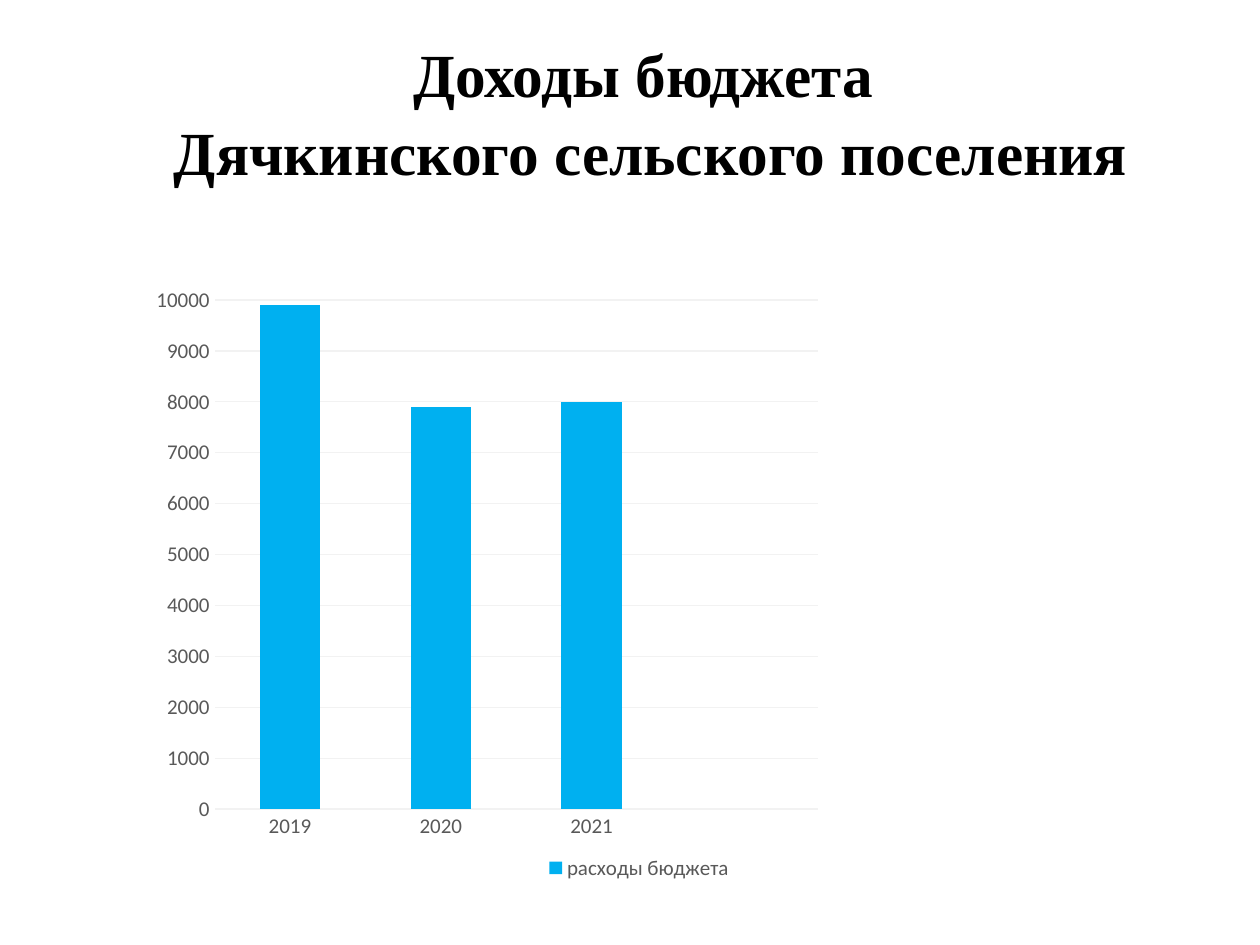
from lxml.etree import SubElement
from pptx import Presentation
from pptx.chart.data import CategoryChartData
from pptx.dml.color import RGBColor
from pptx.enum.chart import XL_CHART_TYPE, XL_LEGEND_POSITION, XL_TICK_MARK
from pptx.enum.text import MSO_ANCHOR, MSO_AUTO_SIZE, PP_ALIGN
from pptx.oxml.ns import qn
from pptx.util import Pt

COLORS = {"title": "000000", "label": "595959", "grid": "F2F2F2", "bar": "00B0F0"}


def style(font, name, size, color):
    font.name = name
    font.size = Pt(size)
    font.color.rgb = RGBColor.from_string(COLORS[color])


deck = Presentation()
deck.slide_width, deck.slide_height = Pt(720), Pt(540)
slide = deck.slides.add_slide(deck.slide_layouts[5])

# Title
title = slide.shapes.title
title.left, title.top, title.width, title.height = Pt(48), Pt(18), Pt(648), Pt(90)
frame = title.text_frame
frame.text = "Доходы бюджета \nДячкинского сельского поселения"
frame.word_wrap = True
frame.auto_size = MSO_AUTO_SIZE.NONE
frame.vertical_anchor = MSO_ANCHOR.MIDDLE
for line in frame.paragraphs:
    line.alignment = PP_ALIGN.CENTER
    line.line_spacing = 1.06
    for run in line.runs:
        style(run.font, "Times New Roman", 35, "title")
        run.font.bold = True

# Budget chart, with an empty fourth category
data = CategoryChartData()
data.categories = ["2019", "2020", "2021", ""]
data.add_series("расходы бюджета", [9900, 7900, 8000, None])
chart = slide.shapes.add_chart(
    XL_CHART_TYPE.COLUMN_CLUSTERED, Pt(46), Pt(157.5), Pt(638.5), Pt(348.5), data
).chart
chart.has_title = False
style(chart.font, "Calibri", 10, "title")

# Columns
plot = chart.plots[0]
plot.gap_width = 150
plot.vary_by_categories = False
fill = plot.series[0].format.fill
fill.solid()
fill.fore_color.rgb = RGBColor.from_string(COLORS["bar"])

# Axes and grid
for axis in (chart.category_axis, chart.value_axis):
    axis.major_tick_mark = axis.minor_tick_mark = XL_TICK_MARK.NONE
    axis.format.line.fill.background()
    style(axis.tick_labels.font, "Calibri", 12, "label")
axis = chart.value_axis
axis.minimum_scale, axis.maximum_scale, axis.major_unit = 0, 10000, 1000
axis.has_major_gridlines = True
grid = axis.major_gridlines.format.line
grid.width = Pt(0.75)
grid.color.rgb = RGBColor.from_string(COLORS["grid"])

# Legend
chart.has_legend = True
chart.legend.position = XL_LEGEND_POSITION.BOTTOM
chart.legend.include_in_layout = False
style(chart.legend.font, "Calibri", 12, "label")

# Plot area fills the left part of the chart
area = chart.plots[0]._element.getparent()
for old in area.findall(qn("c:layout")):
    area.remove(old)
layout = SubElement(area, qn("c:layout"))
area.insert(0, layout)
manual = SubElement(layout, qn("c:manualLayout"))
for tag, val in (
    ("layoutTarget", "inner"), ("xMode", "edge"), ("yMode", "edge"),
    ("x", "0.12"), ("y", "0.04"), ("w", "0.54"), ("h", "0.835"),
):
    SubElement(manual, qn("c:" + tag)).set("val", val)

deck.save("out.pptx")
